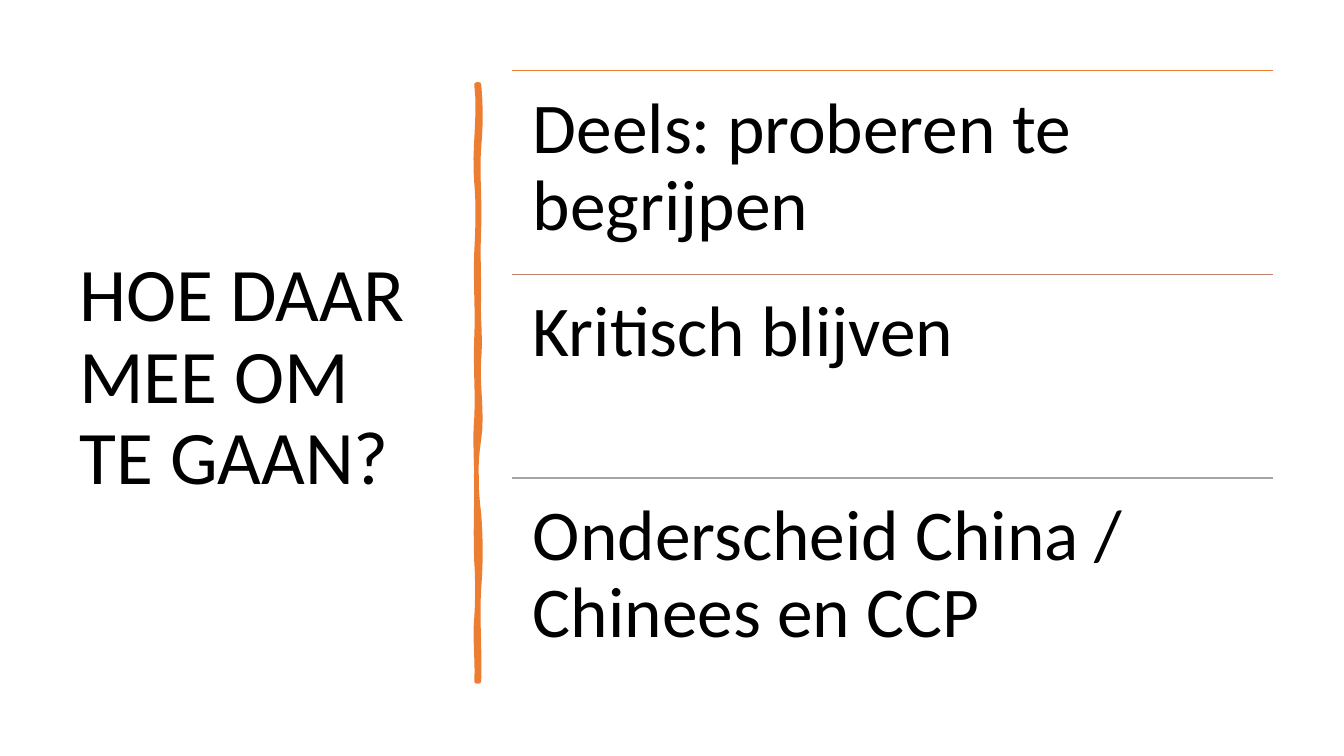
import pptx
import pptx.dml.color
import pptx.enum.shapes
import pptx.enum.text
import pptx.oxml.ns
import pptx.util
from lxml import etree

Cm = pptx.util.Cm
Pt = pptx.util.Pt
RGBColor = pptx.dml.color.RGBColor
ANCHOR = pptx.enum.text.MSO_ANCHOR

BLACK = RGBColor(0x00, 0x00, 0x00)
ORANGE = RGBColor(0xED, 0x7D, 0x31)
CLAY = RGBColor(0xC4, 0x81, 0x70)
GREY = RGBColor(0xA5, 0xA5, 0xA5)

TITLE = "HOE DAAR MEE OM TE GAAN?"
POINTS = [
    ("Deels: proberen te begrijpen", ORANGE),
    ("Kritisch blijven", CLAY),
    ("Onderscheid China / Chinees en CCP", GREY),
]
LIST_LEFT, LIST_TOP, LIST_WIDTH, ROW_HEIGHT = 12.9, 1.78, 19.18, 5.13

STROKE_TOP, STROKE_BOTTOM = 2.13, 17.17
RIGHT_X, LEFT_X = 12.07, 12.01
RIGHT_WAVES = [
    (3.71, 0.05, 0.05), (5.74, -0.05, 0.03), (7.47, -0.03, 0),
    (9.04, -0.03, 0.05), (11.07, -0.05, 0.1), (12.95, -0.1, -0.08),
    (14.83, 0.05, 0.05), (STROKE_BOTTOM, -0.05, 0.03),
]
LEFT_WAVES = [
    (15.57, 0.03, -0.05), (14.15, 0.03, 0.03), (12.12, -0.03, 0),
    (10.54, 0, -0.05), (8.51, 0.03, -0.03), (6.35, 0.03, -0.03),
    (4.6, 0.03, 0.05), (STROKE_TOP, -0.08, 0.1),
]


def add_text(s, text, left, top, width, height, size, anchor, inset_x, inset_y):
    tf = s.shapes.add_textbox(Cm(left), Cm(top), Cm(width), Cm(height)).text_frame
    tf.word_wrap = True
    tf.vertical_anchor = anchor
    tf.margin_left = tf.margin_right = Cm(inset_x)
    tf.margin_top = tf.margin_bottom = Cm(inset_y)
    p = tf.paragraphs[0]
    p.line_spacing = 0.9
    r = p.add_run()
    r.text = text
    r.font.name = "Calibri"
    r.font.size = Pt(size)
    r.font.color.rgb = BLACK


def add_rule(s, left, top, width, color):
    c = s.shapes.add_connector(
        pptx.enum.shapes.MSO_CONNECTOR.STRAIGHT,
        Cm(left), Cm(top), Cm(left + width), Cm(top))
    c.line.color.rgb = color
    c.line.width = Pt(1)
    etree.SubElement(c._element.spPr, pptx.oxml.ns.qn("a:effectLst"))


def wavy_edge(x, y, waves, steps=8):
    points = []
    for end, first, second in waves:
        for i in range(1, steps + 1):
            t = i / steps
            bend = 3 * t * (1 - t) * ((1 - t) * first + t * second)
            points.append((Cm(x + bend), Cm(y + t * (end - y))))
        y = end
    return points


def add_brush_stroke(s):
    fb = s.shapes.build_freeform(Cm(RIGHT_X), Cm(STROKE_TOP))
    fb.add_line_segments(
        wavy_edge(RIGHT_X, STROKE_TOP, RIGHT_WAVES)
        + [(Cm(LEFT_X), Cm(STROKE_BOTTOM))]
        + wavy_edge(LEFT_X, STROKE_BOTTOM, LEFT_WAVES), close=True)
    sp = fb.convert_to_shape()
    sp.shadow.inherit = False
    sp.fill.solid()
    sp.fill.fore_color.rgb = ORANGE
    sp.line.color.rgb = ORANGE
    sp.line.width = Pt(3.25)


def main():
    prs = pptx.Presentation()
    prs.slide_width, prs.slide_height = Cm(33.87), Cm(19.05)
    s = prs.slides.add_slide(prs.slide_layouts[6])
    add_text(s, TITLE, 1.75, 1.78, 9.5, 15.52, 54, ANCHOR.MIDDLE, 0.25, 0.13)
    add_brush_stroke(s)
    for i, (text, color) in enumerate(POINTS):
        top = LIST_TOP + i * ROW_HEIGHT
        add_rule(s, LIST_LEFT, top, LIST_WIDTH, color)
        add_text(s, text, LIST_LEFT, top, LIST_WIDTH, ROW_HEIGHT, 51,
                 ANCHOR.TOP, 0.53, 0.53)
    prs.save("out.pptx")


if __name__ == "__main__":
    main()
